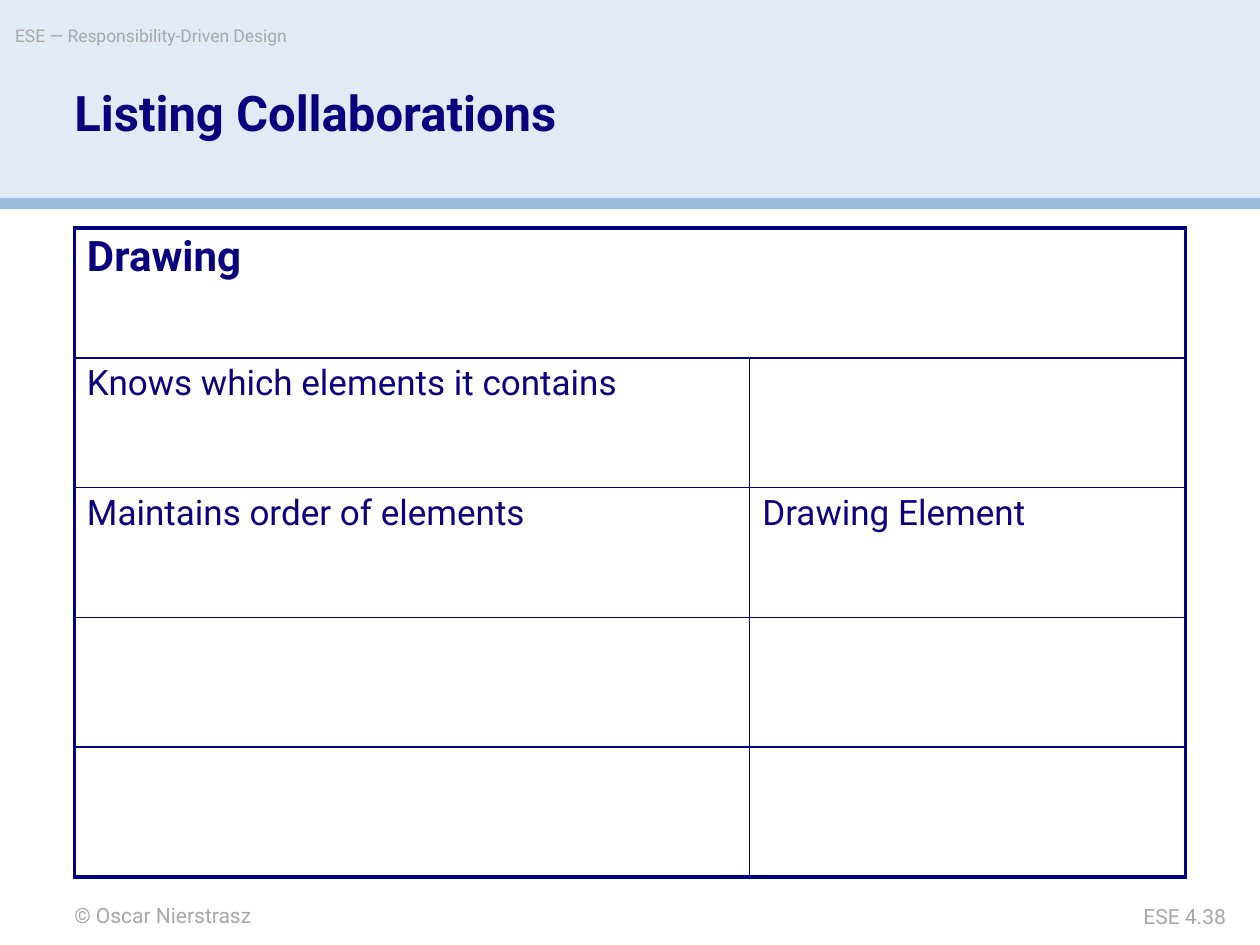
from lxml.etree import SubElement
from pptx import Presentation
from pptx.dml.color import RGBColor
from pptx.enum.shapes import MSO_SHAPE as Shape
from pptx.enum.text import MSO_ANCHOR as Anchor, MSO_AUTO_SIZE as AutoSize, PP_ALIGN as Align
from pptx.oxml import parse_xml
from pptx.oxml.ns import nsdecls, qn
from pptx.util import Inches, Pt

FONT = "Roboto"
NAVY = RGBColor(0x0A, 0x01, 0x7F)
RULE = RGBColor(0x00, 0x02, 0x7F)
GREY = RGBColor(0xA7, 0xA7, 0xA7)
PALE_BLUE = RGBColor(0xE1, 0xEB, 0xF5)
MID_BLUE = RGBColor(0x9C, 0xBD, 0xDE)

WIDTH, HEIGHT = 10, 7.5
MARGIN = 0.59
CARD_TOP = 1.81
COLUMNS = (5.36, 3.46)
ROW_HEIGHT = 1.03
THICK, THIN = 2.25, 1

CARD_NAME = "Drawing"
COLLABORATIONS = [
    ("Knows which elements it contains", ""),
    ("Maintains order of elements", "Drawing Element"),
    ("", ""),
    ("", ""),
]


def box(left, top, width, height):
    return [Inches(length) for length in (left, top, width, height)]


def write(frame, text, size=12, color=GREY, bold=False, align=Align.LEFT, spacing=None):
    paragraph = frame.paragraphs[0]
    paragraph.alignment = align
    if spacing:
        paragraph.line_spacing = spacing
    run = paragraph.add_run()
    run.text = text
    run.font.name = FONT
    run.font.size = Pt(size)
    run.font.bold = bold
    run.font.color.rgb = color
    return paragraph


def clear_insets(frame):
    frame.margin_left = frame.margin_right = frame.margin_top = frame.margin_bottom = 0
    frame.vertical_anchor = Anchor.TOP
    frame.auto_size = AutoSize.NONE
    frame.word_wrap = True


def add_band(slide, top, height, color):
    band = slide.shapes.add_shape(Shape.RECTANGLE, *box(0, top, WIDTH, height))
    band.shadow.inherit = False
    band.fill.solid()
    band.fill.fore_color.rgb = color
    band.line.fill.background()


def add_label(slide, place, text, **text_format):
    frame = slide.shapes.add_textbox(*box(*place)).text_frame
    clear_insets(frame)
    write(frame, text, **text_format)


def set_title(slide, text):
    title = slide.shapes.title
    title.left, title.top, title.width, title.height = box(MARGIN, 0.71, 7.24, 0.89)
    clear_insets(title.text_frame)
    write(title.text_frame, text, size=28, color=NAVY, bold=True, spacing=0.9)


def set_borders(cell, row, column, last_row, last_column):
    outer_edges = {
        "L": column == 0,
        "R": column == last_column,
        "T": row == 0,
        "B": row == last_row,
    }
    properties = cell._tc.get_or_add_tcPr()
    for position, (side, is_outer) in enumerate(outer_edges.items()):
        width = Pt(THICK if is_outer else THIN)
        border = parse_xml(
            f'<a:ln{side} {nsdecls("a")} w="{width}"><a:solidFill>'
            f'<a:srgbClr val="{RULE}"/></a:solidFill></a:ln{side}>'
        )
        properties.insert(position, border)


def write_cell(cell, text, **text_format):
    paragraph = write(cell.text_frame, text, color=NAVY, spacing=0.95, **text_format)
    space_before = SubElement(paragraph._p.get_or_add_pPr(), qn("a:spcBef"))
    SubElement(space_before, qn("a:spcPct"), val="20000")


def add_card(slide):
    rows = [(CARD_NAME, "")] + COLLABORATIONS
    place = box(MARGIN, CARD_TOP, sum(COLUMNS), ROW_HEIGHT * len(rows))
    card = slide.shapes.add_table(len(rows), len(COLUMNS), *place).table
    card.first_row = card.horz_banding = False
    for column, width in zip(card.columns, COLUMNS):
        column.width = Inches(width)
    for row in card.rows:
        row.height = Inches(ROW_HEIGHT)
    card.cell(0, 0).merge(card.cell(0, len(COLUMNS) - 1))
    for row, texts in enumerate(rows):
        for column, text in enumerate(texts):
            cell = card.cell(row, column)
            cell.fill.background()
            last_column = column if cell.is_merge_origin else len(COLUMNS) - 1
            set_borders(cell, row, column, len(rows) - 1, last_column)
            if text:
                is_name = row == 0
                write_cell(cell, text, size=24 if is_name else 20, bold=is_name)


def main():
    deck = Presentation()
    deck.slide_width, deck.slide_height = Inches(WIDTH), Inches(HEIGHT)
    slide = deck.slides.add_slide(deck.slide_layouts[5])
    add_band(slide, 0, 1.58, PALE_BLUE)
    add_band(slide, 1.57, 0.09, MID_BLUE)
    add_label(slide, (MARGIN, 7.16, 4.17, 0.2), "© Oscar Nierstrasz")
    add_label(slide, (0.12, 0.2, 5.9, 0.28), "ESE — Responsibility-Driven Design", size=10)
    add_label(slide, (8.25, 7.17, 1.48, 0.2), "ESE 4.38", align=Align.RIGHT)
    set_title(slide, "Listing Collaborations")
    title = slide.shapes.title._element
    title.getparent().append(title)
    add_card(slide)
    deck.save("out.pptx")


if __name__ == "__main__":
    main()
